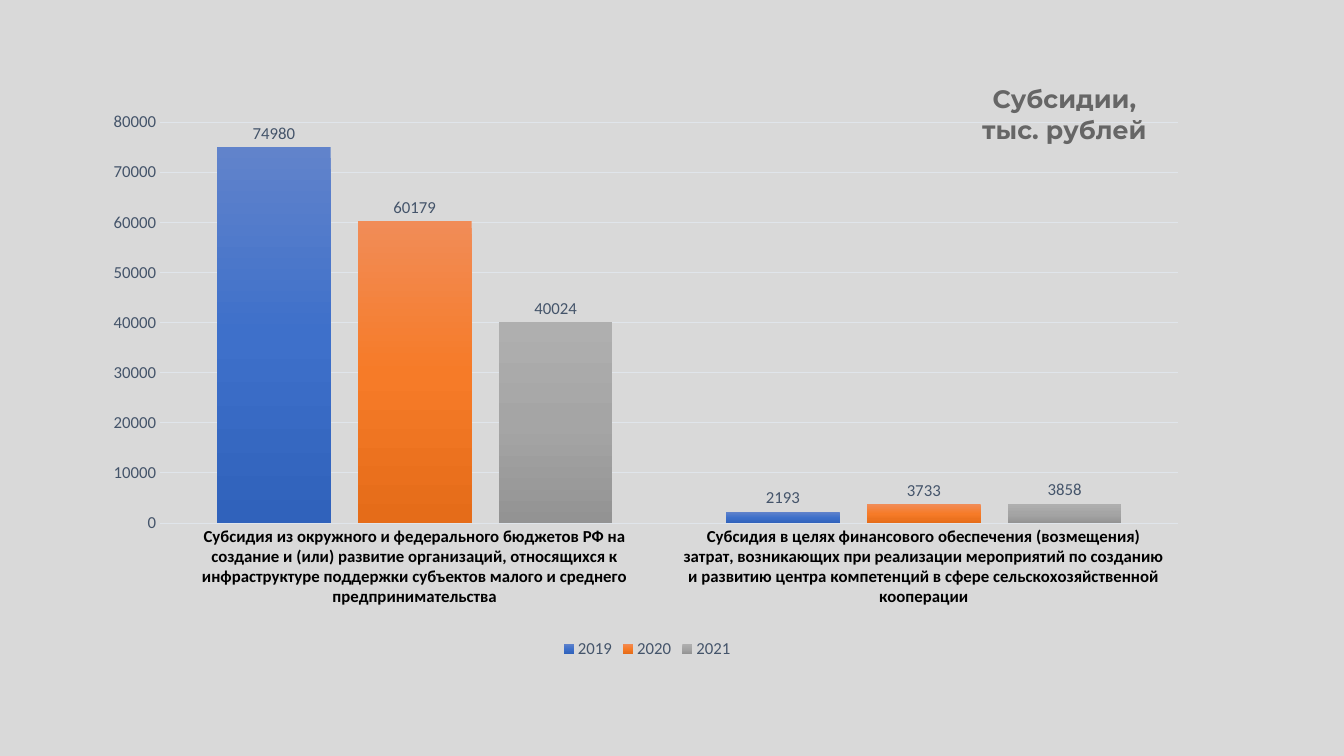
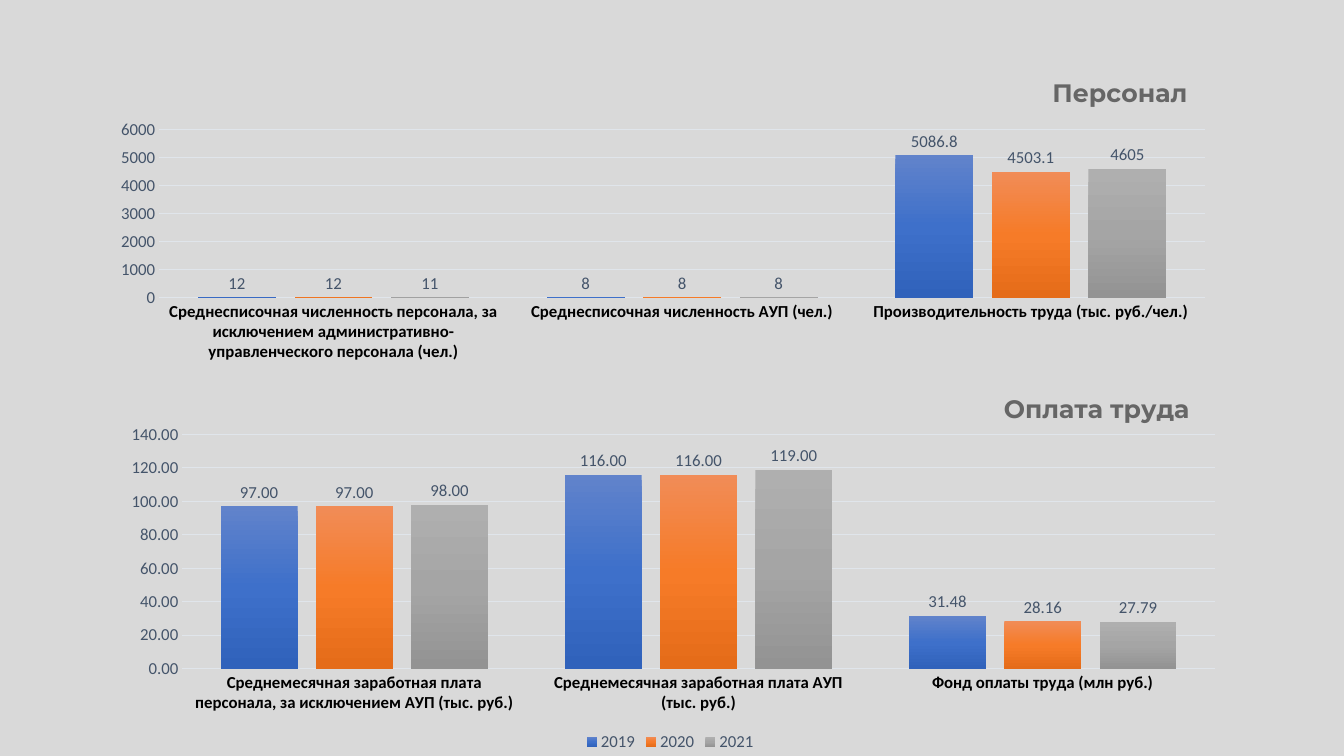
from lxml.etree import SubElement
from pptx import Presentation
from pptx.chart.data import CategoryChartData
from pptx.dml.color import RGBColor
from pptx.enum.chart import XL_CHART_TYPE, XL_LABEL_POSITION, XL_LEGEND_POSITION, XL_TICK_MARK
from pptx.enum.text import PP_ALIGN
from pptx.oxml.ns import qn
from pptx.util import Pt

COLORS = {
    "background": "D9D9D9",
    "title": "666666",
    "category": "000000",
    "label": "44546A",
    "grid": "E0E5EB",
}
YEAR_GRADIENTS = {
    "2019": ("6183CB", "3E70CA", "3062BB"),
    "2020": ("F18C57", "F67B28", "E56C19"),
    "2021": ("AFAFAF", "A5A5A5", "939393"),
}
TITLE_FONT, BODY_FONT = "Montserrat", "Calibri"


def rgb(name):
    return RGBColor.from_string(COLORS[name])


def style_font(font, color, size=12, bold=False, name=BODY_FONT):
    font.name, font.size, font.bold = name, Pt(size), bold
    font.color.rgb = rgb(color)


def place_in_chart(parent, index, target=None, **fractions):
    """Pin a chart part at fractions of the chart area."""
    for old in parent.findall(qn("c:layout")):
        parent.remove(old)
    layout = parent.makeelement(qn("c:layout"))
    parent.insert(index, layout)
    manual = SubElement(layout, qn("c:manualLayout"))
    if target:
        SubElement(manual, qn("c:layoutTarget")).set("val", target)
    for key in ("x", "y"):
        SubElement(manual, qn(f"c:{key}Mode")).set("val", "edge")
    for key, value in fractions.items():
        SubElement(manual, qn(f"c:{key}")).set("val", str(value))


def fill_gradient(fill, series, stops):
    fill.gradient()
    fill.gradient_angle = 270
    stop_list = next(series._element.iter(qn("a:gsLst")))
    for old in list(stop_list):
        stop_list.remove(old)
    for i, color in enumerate(stops):
        stop = SubElement(stop_list, qn("a:gs"))
        stop.set("pos", str(i * 50000))
        SubElement(stop, qn("a:srgbClr")).set("val", color)


def style_axes(chart, number_format):
    cat, val = chart.category_axis, chart.value_axis
    for axis in (cat, val):
        axis.major_tick_mark = axis.minor_tick_mark = XL_TICK_MARK.NONE
    style_font(cat.tick_labels.font, "category", bold=True)
    style_font(val.tick_labels.font, "label")
    val.tick_labels.number_format = number_format
    val.tick_labels.number_format_is_linked = False
    val.format.line.fill.background()
    val.has_major_gridlines = True
    for line in (cat.format.line, val.major_gridlines.format.line):
        line.color.rgb = rgb("grid")
        line.width = Pt(0.75)


def style_series(chart, number_format):
    plot = chart.plots[0]
    plot.gap_width, plot.overlap, plot.vary_by_categories = 100, -24, False
    for series in plot.series:
        fill_gradient(series.format.fill, series, YEAR_GRADIENTS[series.name])
        labels = series.data_labels
        labels.show_value = True
        labels.position = XL_LABEL_POSITION.OUTSIDE_END
        labels.number_format = number_format
        labels.number_format_is_linked = False
        style_font(labels.font, "label")


def add_title(chart, lines, x, y):
    chart.has_title = True
    tf = chart.chart_title.text_frame
    for i, line in enumerate(lines):
        p = tf.add_paragraph() if i else tf.paragraphs[0]
        p.alignment = PP_ALIGN.CENTER
        r = p.add_run()
        r.text = line
        style_font(r.font, "title", 18, True, TITLE_FONT)
    place_in_chart(chart.chart_title._element, 1, x=x, y=y)


def add_legend(chart):
    chart.has_legend = True
    chart.legend.position = XL_LEGEND_POSITION.BOTTOM
    chart.legend.include_in_layout = False
    style_font(chart.legend.font, "label")


def add_year_chart(s, box, title, title_at, plot_box, rows, number_format="General", legend=True):
    """Clustered columns by year; rows map a category to its yearly values."""
    data = CategoryChartData(number_format=number_format)
    data.categories = list(rows)
    for year, values in zip(YEAR_GRADIENTS, zip(*rows.values())):
        data.add_series(year, values)
    frame = s.shapes.add_chart(XL_CHART_TYPE.COLUMN_CLUSTERED, *map(Pt, box), data)
    chart = frame.chart
    style_font(chart.font, "category", 10)
    style_axes(chart, number_format)
    style_series(chart, number_format)
    add_title(chart, title, *title_at)
    chart.has_legend = False
    if legend:
        add_legend(chart)
    plot_area = next(chart._chartSpace.iter(qn("c:plotArea")))
    place_in_chart(plot_area, 0, "inner", **dict(zip("xywh", plot_box)))


def add_subsidies_slide(prs):
    s = prs.slides.add_slide(prs.slide_layouts[6])
    add_year_chart(
        s, (67, 39.5, 790.5, 434), ("Субсидии,", "тыс. рублей"), (0.8, 0.04),
        (0.06, 0.11, 0.92, 0.66),
        {
            "Субсидия из окружного и федерального бюджетов РФ на создание и (или) развитие "
            "организаций, относящихся к инфраструктуре поддержки субъектов малого и среднего "
            "предпринимательства": (74980, 60179, 40024),
            "Субсидия в целях финансового обеспечения (возмещения) затрат, возникающих при "
            "реализации мероприятий по созданию и развитию центра компетенций в сфере "
            "сельскохозяйственной кооперации": (2193, 3733, 3858),
        })


def add_staff_slide(prs):
    s = prs.slides.add_slide(prs.slide_layouts[6])
    add_year_chart(
        s, (73.5, 39.5, 803.5, 222), ("Персонал",), (0.84, 0.05),
        (0.05, 0.24, 0.93, 0.54),
        {
            "Среднесписочная численность персонала, за исключением "
            "административно-управленческого персонала (чел.)": (12, 12, 11),
            "Среднесписочная численность АУП (чел.)": (8, 8, 8),
            "Производительность труда (тыс. руб./чел.)": (5086.8, 4503.1, 4605),
        }, legend=False)
    add_year_chart(
        s, (73.5, 256.5, 810.5, 283.5), ("Оплата труда",), (0.79, 0.07),
        (0.07, 0.19, 0.91, 0.59),
        {
            "Среднемесячная заработная плата персонала, за исключением АУП (тыс. руб.)":
                (97, 97, 98),
            "Среднемесячная заработная плата АУП (тыс. руб.)": (116, 116, 119),
            "Фонд оплаты труда (млн руб.)": (31.48, 28.16, 27.79),
        }, "#,##0.00")


def main():
    prs = Presentation()
    prs.slide_width, prs.slide_height = Pt(960), Pt(540)
    fill = prs.slide_master.background.fill
    fill.solid()
    fill.fore_color.rgb = rgb("background")
    add_subsidies_slide(prs)
    add_staff_slide(prs)
    prs.save("out.pptx")


if __name__ == "__main__":
    main()
